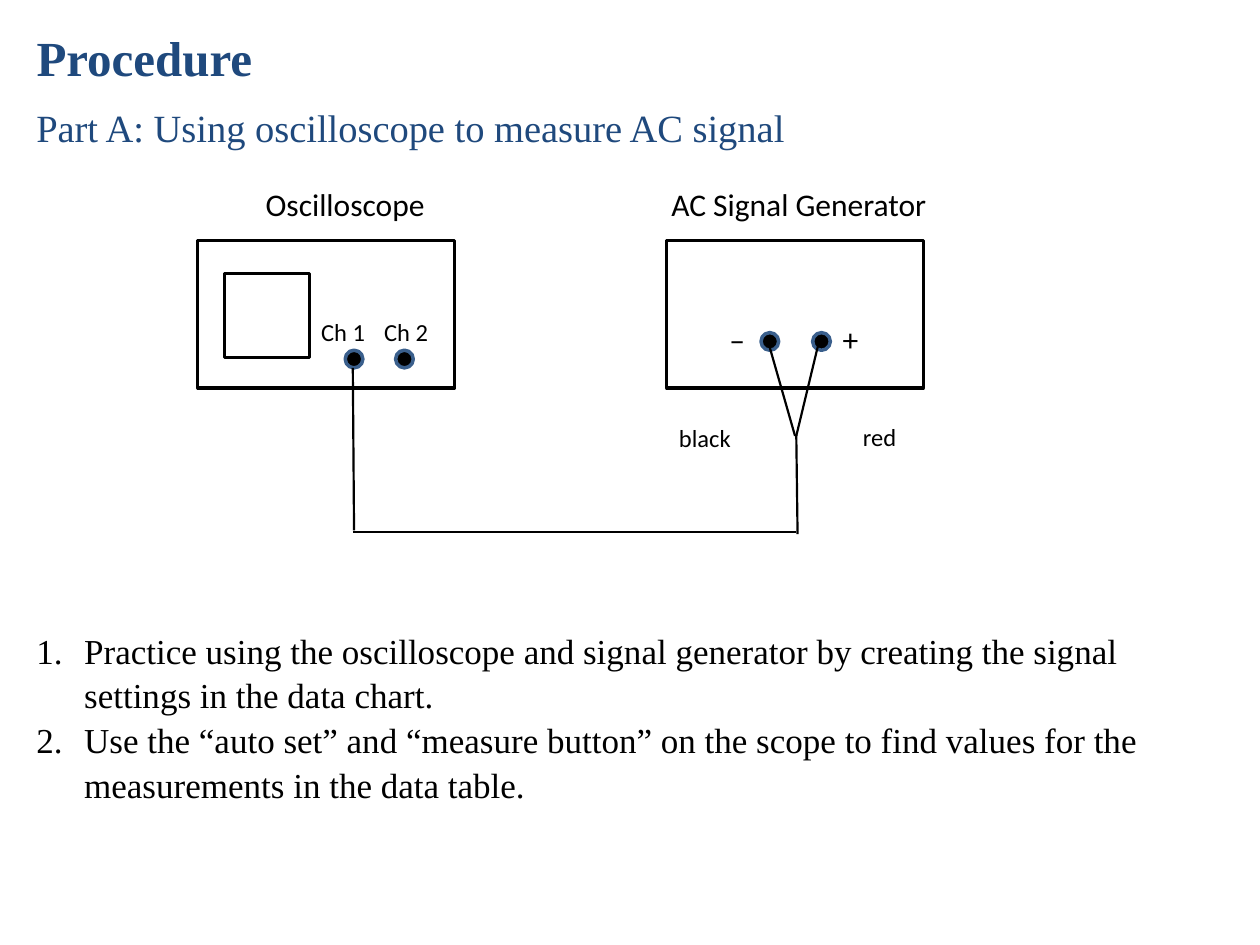
"""Build the procedure slide with the oscilloscope and signal generator wiring."""
from lxml import etree
from pptx import Presentation
from pptx.dml.color import RGBColor
from pptx.enum.shapes import MSO_CONNECTOR, MSO_SHAPE
from pptx.enum.text import MSO_ANCHOR, PP_ALIGN
from pptx.oxml.ns import qn
from pptx.util import Inches, Pt

RECTANGLE, ELLIPSE = MSO_SHAPE.RECTANGLE, MSO_SHAPE.OVAL
STRAIGHT = MSO_CONNECTOR.STRAIGHT
TOP, LEFT = MSO_ANCHOR.TOP, PP_ALIGN.LEFT
NAVY = RGBColor(0x1F, 0x49, 0x7D)
RIM = RGBColor(0x3A, 0x5F, 0x8C)
BLACK = RGBColor(0, 0, 0)
SERIF, SANS = "Times New Roman", "Calibri"

TITLE = "Procedure"
SUBTITLE = "Part A: Using oscilloscope to measure AC signal"
STEPS = [
    "Practice using the oscilloscope and signal generator by creating the signal settings in the data chart.",
    "Use the “auto set” and “measure button” on the scope to find values for the measurements in the data table.",
]
BOXES = [(1.57, 1.91, 2.04, 1.17), (1.78, 2.17, 0.68, 0.67), (5.29, 1.91, 2.04, 1.17)]
JACK_SIZE = 0.14
JACKS = [(6.04, 2.64), (6.45, 2.64), (2.74, 2.78), (3.14, 2.78)]
LABELS = [
    ("–", 5.69, 2.49, 0.3, 18),
    ("+", 6.59, 2.49, 0.33, 18),
    ("Ch 1", 2.45, 2.47, 0.55, 14),
    ("Ch 2", 2.95, 2.47, 0.55, 14),
    ("black", 5.29, 3.31, 0.62, 14),
    ("red", 6.75, 3.3, 0.47, 14),
    ("Oscilloscope", 2.01, 1.42, 1.48, 18),
    ("AC Signal Generator", 5.23, 1.42, 2.25, 18),
]
WIRES = [
    ((6.09, 2.69), (6.31, 3.46)),
    ((6.51, 2.67), (6.32, 3.46)),
    ((6.32, 3.45), (6.33, 4.24)),
    ((2.8, 4.22), (6.32, 4.22)),
    ((2.8, 2.92), (2.81, 4.21)),
]


def write(shape, texts, size, font=SANS, color=BLACK, bold=False, wrap=True):
    frame = shape.text_frame
    frame.word_wrap = wrap
    frame.vertical_anchor = TOP
    frame.text = "\n".join(texts)
    for paragraph in frame.paragraphs:
        paragraph.alignment = LEFT
        paragraph.font.size = Pt(size)
        paragraph.font.name = font
        paragraph.font.bold = bold
        paragraph.font.color.rgb = color
    return frame


def add_text(slide, texts, place, size, **style):
    box = slide.shapes.add_textbox(*map(Inches, place))
    return write(box, texts, size, **style)


def number(paragraph, indent):
    properties = paragraph._p.get_or_add_pPr()
    properties.set("marL", str(Inches(indent)))
    properties.set("indent", str(-Inches(indent)))
    bullet = etree.Element(qn("a:buAutoNum"), type="arabicPeriod")
    properties.insert_element_before(bullet, "a:tabLst", "a:defRPr", "a:extLst")


def add_outline(slide, kind, place, color, width, fill=None):
    shape = slide.shapes.add_shape(kind, *map(Inches, place))
    shape.shadow.inherit = False
    shape.line.color.rgb = color
    shape.line.width = Pt(width)
    if fill is None:
        shape.fill.background()
    else:
        shape.fill.solid()
        shape.fill.fore_color.rgb = fill


def add_wire(slide, start, end):
    wire = slide.shapes.add_connector(STRAIGHT, *map(Inches, start + end))
    wire.line.color.rgb = BLACK
    wire.line.width = Pt(1.25)
    etree.SubElement(wire._element.spPr, qn("a:effectLst"))


def main():
    presentation = Presentation()
    presentation.slide_width, presentation.slide_height = Inches(10), Inches(7.5)
    slide = presentation.slides.add_slide(presentation.slide_layouts[5])

    title = slide.shapes.title
    title.left, title.top, title.width, title.height = map(Inches, (0.19, 0.17, 9.67, 0.55))
    write(title, [TITLE], 28, font=SERIF, color=NAVY, bold=True)
    add_text(slide, [SUBTITLE], (0.19, 0.78, 9.67, 0.45), 22, font=SERIF, color=NAVY)
    steps = add_text(slide, STEPS, (0.19, 4.92, 9.67, 1.6), 20, font=SERIF)
    for paragraph in steps.paragraphs:
        paragraph.line_spacing = 1.07
        number(paragraph, 0.38)

    for place in BOXES:
        add_outline(slide, RECTANGLE, place, BLACK, 1.75)
    for left, top in JACKS:
        add_outline(slide, ELLIPSE, (left, top, JACK_SIZE, JACK_SIZE), RIM, 2, fill=BLACK)
    for start, end in WIRES:
        add_wire(slide, start, end)
    for text, left, top, width, size in LABELS:
        height = 0.4 if size == 18 else 0.34
        add_text(slide, [text], (left, top, width, height), size, wrap=False)

    presentation.save("out.pptx")


if __name__ == "__main__":
    main()
